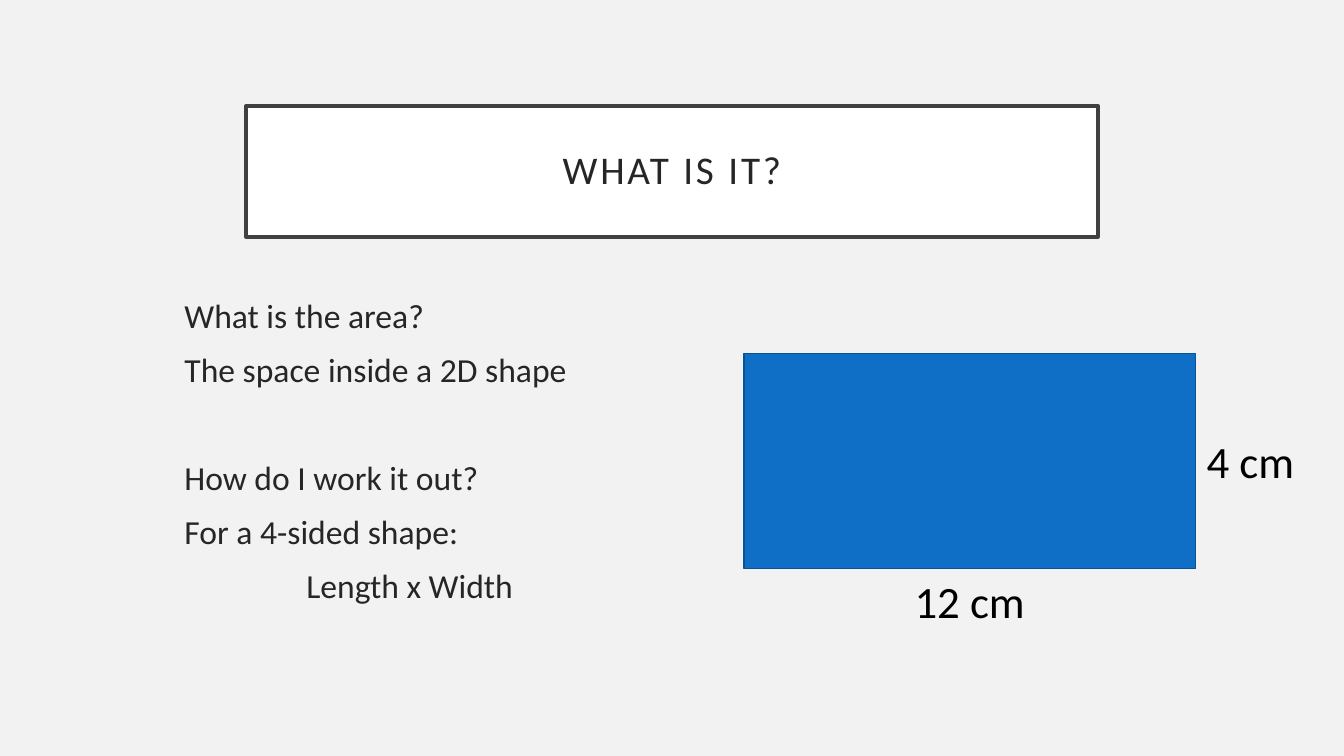
from pptx import Presentation
from pptx.dml.color import RGBColor
from pptx.enum.shapes import MSO_SHAPE
from pptx.enum.text import MSO_ANCHOR, MSO_AUTO_SIZE, PP_ALIGN
from pptx.util import Inches, Pt

WIDE, HIGH = Inches(13.333), Inches(7.5)
FONT = "Calibri"
COLORS = {
    "back": "F2F2F2", "white": "FFFFFF", "frame": "404040", "text": "262626",
    "blue": "0F6FC6", "edge": "0B5292", "black": "000000",
}


def color(name):
    return RGBColor.from_string(COLORS[name])


def place(x, y, w, h):
    """Turn percentages of the slide into lengths."""
    return [round(part * size / 100)
            for part, size in zip((x, y, w, h), (WIDE, HIGH, WIDE, HIGH))]


def style(para, size, ink, align=PP_ALIGN.LEFT):
    para.alignment = align
    for run in para.runs:
        run.font.name = FONT
        run.font.size = Pt(size)
        run.font.color.rgb = color(ink)


def add_box(slide, area, fill, line, width):
    box = slide.shapes.add_shape(MSO_SHAPE.RECTANGLE, *place(*area))
    box.shadow.inherit = False
    box.fill.solid()
    box.fill.fore_color.rgb = color(fill)
    box.line.color.rgb = color(line)
    box.line.width = Pt(width)
    return box


def add_title(slide, area, text):
    frame = add_box(slide, area, "white", "frame", 2.5).text_frame
    frame.text = text
    frame.word_wrap = True
    frame.vertical_anchor = MSO_ANCHOR.MIDDLE
    frame.margin_left = frame.margin_right = Inches(0.2)
    frame.margin_top = frame.margin_bottom = Inches(0.2)
    para = frame.paragraphs[0]
    style(para, 28, "text", PP_ALIGN.CENTER)
    para.line_spacing = 0.9
    para.runs[0].font._element.set("spc", "200")


def add_body(slide, area, lines):
    frame = slide.shapes.add_textbox(*place(*area)).text_frame
    frame.word_wrap = True
    frame.text = "\n".join(text for text, gap, align in lines)
    for para, (text, gap, align) in zip(frame.paragraphs, lines):
        style(para, 24, "text", align)
        para.space_before = Pt(gap)


def add_label(slide, area, text):
    frame = slide.shapes.add_textbox(*place(*area)).text_frame
    frame.text = text
    frame.word_wrap = False
    frame.auto_size = MSO_AUTO_SIZE.SHAPE_TO_FIT_TEXT
    style(frame.paragraphs[0], 32, "black", PP_ALIGN.CENTER)


def main():
    deck = Presentation()
    deck.slide_width, deck.slide_height = WIDE, HIGH
    slide = deck.slides.add_slide(deck.slide_layouts[6])
    slide.background.fill.solid()
    slide.background.fill.fore_color.rgb = color("back")

    # Title and questions
    add_title(slide, (18.3, 14, 63.4, 17.33), "WHAT IS IT?")
    left, mid = PP_ALIGN.LEFT, PP_ALIGN.CENTER
    near, far = 9.6, 48.5
    add_body(slide, (12.98, 38.4, 35, 45.2), [
        ("What is the area?", near, left),
        ("The space inside a 2D shape", near, left),
        ("How do I work it out?", far, left),
        ("For a 4-sided shape:", near, left),
        ("Length x Width", near, mid),
    ])

    # Rectangle with its two side lengths
    x, y, w, h = 55.35, 46.8, 33.6, 28.4
    add_box(slide, (x, y, w, h), "blue", "edge", 1)
    tall, side, base = 8.53, 8.18, 9.9
    add_label(slide, (x + w, y + (h - tall) / 2, side, tall), "4 cm")
    add_label(slide, (x + (w - base) / 2, y + h, base, tall), "12 cm")

    deck.save("out.pptx")


if __name__ == "__main__":
    main()
